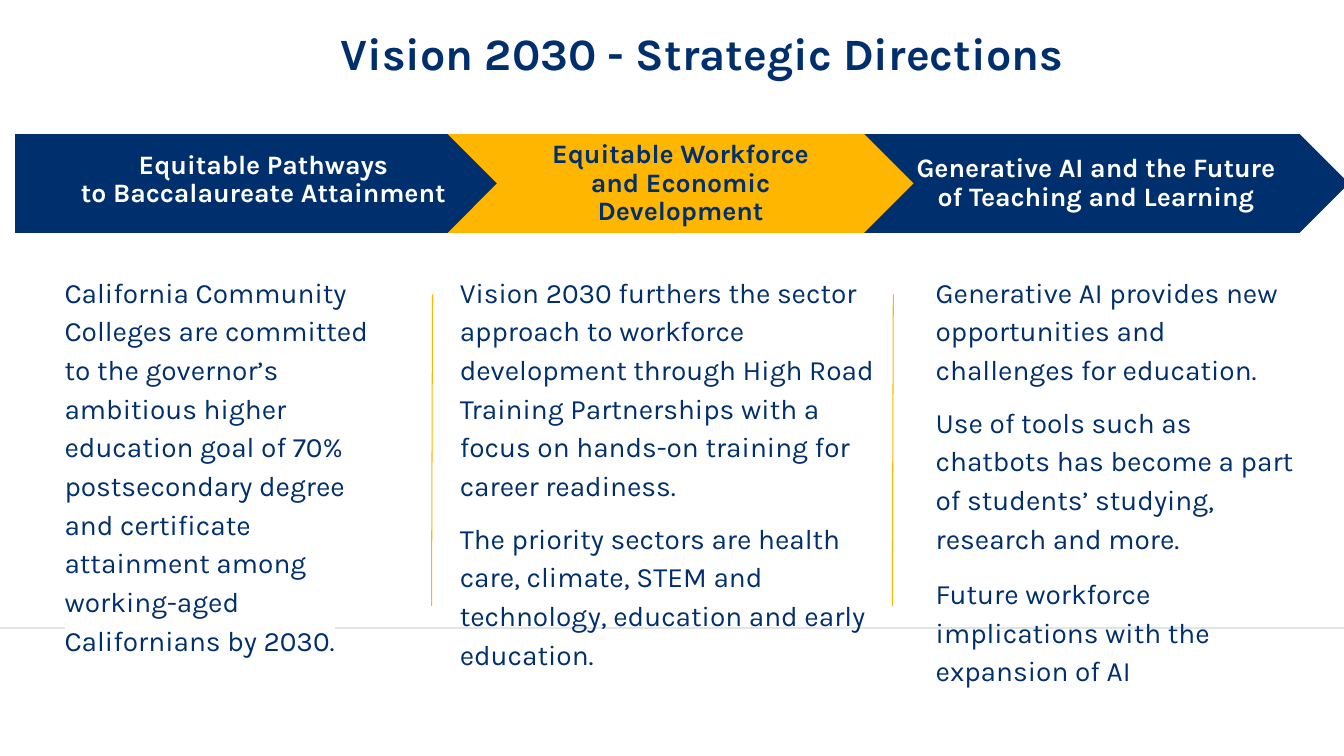
"""Build the Vision 2030 strategic directions slide."""
from lxml.etree import SubElement
from pptx import Presentation
from pptx.dml.color import RGBColor
from pptx.enum.shapes import MSO_CONNECTOR, MSO_SHAPE
from pptx.enum.text import MSO_ANCHOR, PP_ALIGN
from pptx.oxml.ns import qn
from pptx.util import Inches, Pt

NAVY, GOLD, WHITE, GRAY = "002F6D", "FFB600", "FFFFFF", "E3E5E5"

BANNERS = [
    (MSO_SHAPE.CHEVRON, 8.36, 5.02, NAVY, WHITE, 0.13,
     ["Generative AI and the Future of Teaching and Learning"]),
    (MSO_SHAPE.PENTAGON, 0.15, 5.17, NAVY, WHITE, 0.2,
     ["Equitable Pathways", "to Baccalaureate Attainment"]),
    (MSO_SHAPE.CHEVRON, 4.44, 4.62, GOLD, NAVY, 0.13,
     ["Equitable Workforce", "and Economic Development"]),
]

COLUMNS = [
    (0.37, 3.59, 3.81, WHITE, [
        ("California Community Colleges are committed to the governor’s ambitious "
         "higher education goal of 70% postsecondary degree and certificate "
         "attainment among working-aged Californians by 2030.", 0)]),
    (4.29, 4.56, 3.91, None, [
        ("Vision 2030 furthers the sector approach to workforce development through "
         "High Road Training Partnerships with a focus on hands-on training for "
         "career readiness.", 0),
        ("The priority sectors are health care, climate, STEM and technology, "
         "education and early education.", 10)]),
    (9.01, 4.08, 3.4, None, [
        ("Generative AI provides new opportunities and challenges for education.", 0),
        ("Use of tools such as chatbots has become a part of students’ studying, "
         "research and more.", 10),
        ("Future workforce implications with the expansion of AI", 12)]),
]


def color(value):
    """Turn a hex string into a colour."""
    return RGBColor.from_string(value)


def set_values(target, values):
    """Set each attribute named in a dict."""
    for name, value in values.items():
        setattr(target, name, value)


class SlideBuilder:
    """Hold the style and the current slide."""

    font_name = "Karla"

    def __init__(self, slide):
        """Start on a white slide."""
        self.slide = slide
        slide.background.fill.solid()
        slide.background.fill.fore_color.rgb = color(WHITE)

    def fill_frame(self, frame, texts, size, text_color, insets, bold=False,
                   highlight=None, anchor=MSO_ANCHOR.TOP, **paragraph_format):
        """Fill a text frame with (text, space before) paragraphs."""
        sides = ("margin_left", "margin_top", "margin_right", "margin_bottom")
        set_values(frame, {"word_wrap": True, "vertical_anchor": anchor})
        set_values(frame, dict(zip(sides, map(Inches, insets))))
        for index, (text, space) in enumerate(texts):
            paragraph = frame.add_paragraph() if index else frame.paragraphs[0]
            set_values(paragraph, {"space_before": Pt(space), **paragraph_format})
            run = paragraph.add_run()
            run.text = text
            run.font.color.rgb = color(text_color)
            if highlight:
                mark = SubElement(run.font._element, qn("a:highlight"))
                SubElement(mark, qn("a:srgbClr"), val=highlight)
            set_values(run.font, {"name": self.font_name, "size": Pt(size), "bold": bold})

    def text(self, left, top, width, height, texts, **style):
        """Add a text box."""
        box = self.slide.shapes.add_textbox(*map(Inches, (left, top, width, height)))
        self.fill_frame(box.text_frame, texts, **style)

    def banner(self, kind, left, width, fill, text_color, bottom, lines):
        """Add an arrow-shaped heading."""
        shape = self.slide.shapes.add_shape(
            kind, *map(Inches, (left, 1.33, width, 0.98)))
        shape.adjustments[0] = 0.5
        shape.shadow.inherit = False
        shape.fill.solid()
        shape.fill.fore_color.rgb = color(fill)
        shape.line.fill.background()
        self.fill_frame(shape.text_frame, [(line, 0) for line in lines], size=19,
                        text_color=text_color, bold=True,
                        insets=(0.13, 0.13, 0.13, bottom), anchor=MSO_ANCHOR.MIDDLE,
                        alignment=PP_ALIGN.CENTER, line_spacing=0.9)

    def line(self, start, end, line_color, width):
        """Add a straight line."""
        connector = self.slide.shapes.add_connector(
            MSO_CONNECTOR.STRAIGHT, *map(Inches, start + end))
        connector.line.color.rgb = color(line_color)
        connector.line.width = Pt(width)
        SubElement(connector._element.spPr, qn("a:effectLst"))


def main():
    """Build and save the slide."""
    presentation = Presentation()
    set_values(presentation, {"slide_width": Inches(13.33), "slide_height": Inches(7.5)})
    builder = SlideBuilder(presentation.slides.add_slide(presentation.slide_layouts[6]))
    builder.line((0, 6.23), (13.33, 6.23), GRAY, 1)
    builder.text(-0.15, -0.18, 14.23, 1.51, [("Vision 2030 - Strategic Directions", 0)],
                 size=32, text_color=NAVY, bold=True, insets=(0.5, 0.5, 0.5, 0.05),
                 alignment=PP_ALIGN.CENTER, line_spacing=0.9)
    for banner in BANNERS:
        builder.banner(*banner)
    for left, width, height, highlight, texts in COLUMNS:
        builder.text(left, 2.55, width, height, texts, size=20, text_color=NAVY,
                     highlight=highlight, insets=(0.27, 0.13, 0.13, 0.13),
                     alignment=PP_ALIGN.LEFT, line_spacing=1.15)
    for divider in (8.86, 4.29):
        builder.line((divider, 2.92), (divider - 0.01, 6.01), GOLD, 0.75)
    presentation.save("out.pptx")


if __name__ == "__main__":
    main()
